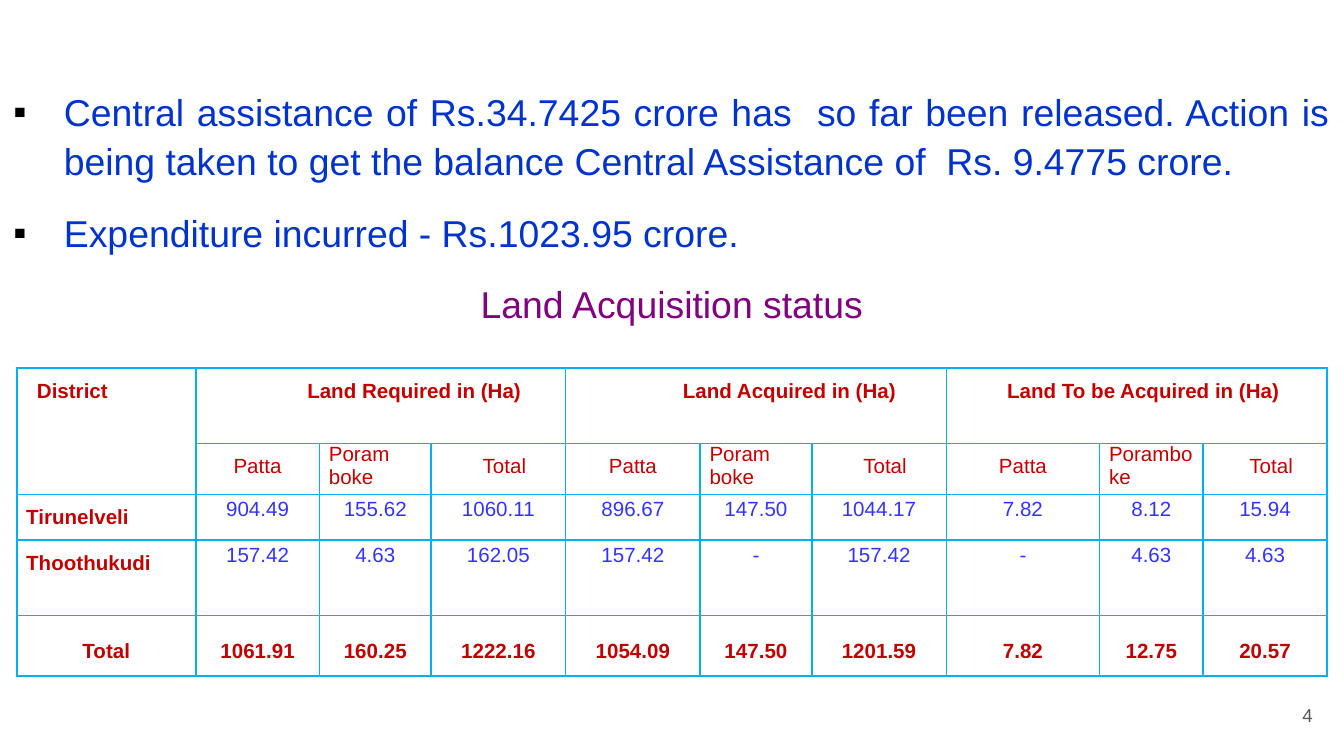
from collections import namedtuple

from lxml.etree import SubElement
from pptx import Presentation
from pptx.dml.color import RGBColor
from pptx.enum.text import MSO_ANCHOR, MSO_AUTO_SIZE, PP_ALIGN
from pptx.oxml.ns import qn
from pptx.util import Inches, Pt

BLUE = RGBColor(0x00, 0x33, 0xCC)
PURPLE = RGBColor(0x80, 0x00, 0x80)
RED = RGBColor(0xC0, 0x00, 0x00)
FIGURE_BLUE = RGBColor(0x33, 0x33, 0xFF)
BORDER_CYAN = RGBColor(0x00, 0xB0, 0xF0)
BLACK = RGBColor(0, 0, 0)
GREY = RGBColor(0x59, 0x59, 0x59)

# Widescreen page, 16 to 9
SLIDE_WIDTH = Inches(10)
SLIDE_HEIGHT = SLIDE_WIDTH * 9 // 16
Box = namedtuple("Box", "left top width height")

# Table grid: relative column widths and row heights
COLUMNS = [1.33, 0.92, 0.83, 1, 1, 0.83, 1, 1.14, 0.77, 0.92]
ROWS = [0.56, 0.38, 0.34, 0.56, 0.45]
GROUPS = [("Land Required in (Ha)", 0.5), ("Land Acquired in (Ha)", 0.5),
          ("Land To be Acquired in (Ha)", 0.1)]
POROMBOKE_LABELS = ["Poram boke", "Poram boke", "Poramboke"]
FIGURES = [
    ["Tirunelveli", "904.49", "155.62", "1060.11", "896.67", "147.50",
     "1044.17", "7.82", "8.12", "15.94"],
    ["Thoothukudi", "157.42", "4.63", "162.05", "157.42", "-",
     "157.42", "-", "4.63", "4.63"],
    ["Total", "1061.91", "160.25", "1222.16", "1054.09", "147.50",
     "1201.59", "7.82", "12.75", "20.57"],
]

# Paragraph formats
LIST = dict(alignment=PP_ALIGN.JUSTIFY, line_spacing=1.1, space_before=Pt(12))
CAPTION = dict(LIST, alignment=PP_ALIGN.CENTER)
HEADER = dict(alignment=PP_ALIGN.CENTER, line_spacing=1.5, space_after=Pt(10))
DISTRICT = dict(HEADER, alignment=PP_ALIGN.JUSTIFY)
FIGURE = dict(alignment=PP_ALIGN.CENTER, line_spacing=1.15)
SUM = dict(alignment=PP_ALIGN.CENTER, line_spacing=1.5)
PLAIN = dict(alignment=PP_ALIGN.LEFT)
LIST_INDENT = 3 / 8


def share(left, top, width, height):
    """Box given in percent of the slide's size."""
    return Box(int(left * SLIDE_WIDTH / 100), int(top * SLIDE_HEIGHT / 100),
               int(width * SLIDE_WIDTH / 100), int(height * SLIDE_HEIGHT / 100))


def set_all(target, values):
    for name, value in values.items():
        setattr(target, name, value)


def write(para, text, layout, size, color, bold=False, margin=0, indent=0):
    set_all(para, layout)
    properties = para._p.get_or_add_pPr()
    properties.set("marL", str(Inches(margin)))
    properties.set("indent", str(Inches(indent)))
    span = para.add_run()
    span.text = text
    set_all(span.font, dict(name="Arial", size=Pt(size), bold=bold))
    span.font.color.rgb = color


def set_bullet(para, char=None):
    properties = para._p.get_or_add_pPr()
    if char is None:
        SubElement(properties, qn("a:buNone"))
        return
    SubElement(SubElement(properties, qn("a:buClr")), qn("a:srgbClr"), val=str(BLACK))
    SubElement(properties, qn("a:buFont"), typeface="Arial")
    SubElement(properties, qn("a:buChar"), char=char)


def fill_body(page, box):
    """Bulleted finance points and the caption of the table."""
    body = page.placeholders[1]
    set_all(body, box._asdict())
    frame = body.text_frame
    set_all(frame, dict(word_wrap=True, auto_size=MSO_AUTO_SIZE.SHAPE_TO_FIT_TEXT,
                        vertical_anchor=MSO_ANCHOR.TOP))
    points = [
        "Central assistance of Rs.34.7425 crore has  so far been released. Action is "
        "being taken to get the balance Central Assistance of  Rs. 9.4775 crore. ",
        "Expenditure incurred - Rs.1023.95 crore.",
    ]
    para = frame.paragraphs[0]
    for point in points:
        write(para, point, LIST, 20, BLUE, margin=LIST_INDENT, indent=-LIST_INDENT)
        set_bullet(para, "▪")
        para = frame.add_paragraph()
    write(para, "Land Acquisition status", CAPTION, 20, PURPLE)
    set_bullet(para)


def format_cell(cell):
    set_all(cell, dict(margin_left=Inches(0.07), margin_right=Inches(0.07),
                       margin_top=0, margin_bottom=0))
    properties = cell._tc.get_or_add_tcPr()
    for side in ("lnL", "lnR", "lnT", "lnB"):
        line = SubElement(properties, qn(f"a:{side}"), w=str(Pt(1)))
        SubElement(SubElement(line, qn("a:solidFill")), qn("a:srgbClr"),
                   val=str(BORDER_CYAN))
    cell.fill.background()


def add_land_table(page, box):
    table = page.shapes.add_table(len(ROWS), len(COLUMNS), *box).table
    set_all(table, dict(first_row=False, horz_banding=False))
    for column, weight in zip(table.columns, COLUMNS):
        column.width = int(box.width * weight / sum(COLUMNS))
    for row, weight in zip(table.rows, ROWS):
        row.height = int(box.height * weight / sum(ROWS))
    for cell in table.iter_cells():
        format_cell(cell)

    def put(row, column, text, layout, color=RED, **options):
        write(table.cell(row, column).text_frame.paragraphs[0], text, layout,
              11, color, **options)

    # Two header rows
    table.cell(0, 0).merge(table.cell(1, 0))
    put(0, 0, "District", DISTRICT, bold=True, margin=0.08)
    for index, (group, margin) in enumerate(GROUPS):
        first = 1 + 3 * index
        table.cell(0, first).merge(table.cell(0, first + 2))
        put(0, first, group, HEADER, bold=True, margin=margin)
        put(1, first, "Patta", HEADER)
        put(1, first + 1, POROMBOKE_LABELS[index], PLAIN)
        put(1, first + 2, "Total", HEADER, margin=0.5, indent=-0.41)

    # Districts and the closing total
    for row, values in enumerate(FIGURES, start=2):
        is_total = row == len(ROWS) - 1
        for column, value in enumerate(values):
            if is_total:
                table.cell(row, column).vertical_anchor = MSO_ANCHOR.MIDDLE
                put(row, column, value, SUM, bold=True)
            elif column == 0:
                put(row, column, value, DISTRICT, bold=True)
            else:
                put(row, column, value, FIGURE, FIGURE_BLUE)


def add_page_number(page, box):
    frame = page.shapes.add_textbox(*box).text_frame
    set_all(frame, dict(word_wrap=True, vertical_anchor=MSO_ANCHOR.MIDDLE,
                        margin_top=Inches(0.1), margin_bottom=Inches(0.1)))
    write(frame.paragraphs[0], "4", dict(alignment=PP_ALIGN.RIGHT), 10, GREY)


def main():
    deck = Presentation()
    set_all(deck, dict(slide_width=SLIDE_WIDTH, slide_height=SLIDE_HEIGHT))
    page = deck.slides.add_slide(deck.slide_layouts[1])
    title = page.shapes.title
    title.element.getparent().remove(title.element)
    fill_body(page, share(0, 10.3, 100, 34.1))
    add_land_table(page, share(1.25, 48.7, 97.5, 40.7))
    add_page_number(page, share(92.65, 90.7, 6, 7.65))
    deck.save("out.pptx")


if __name__ == "__main__":
    main()
